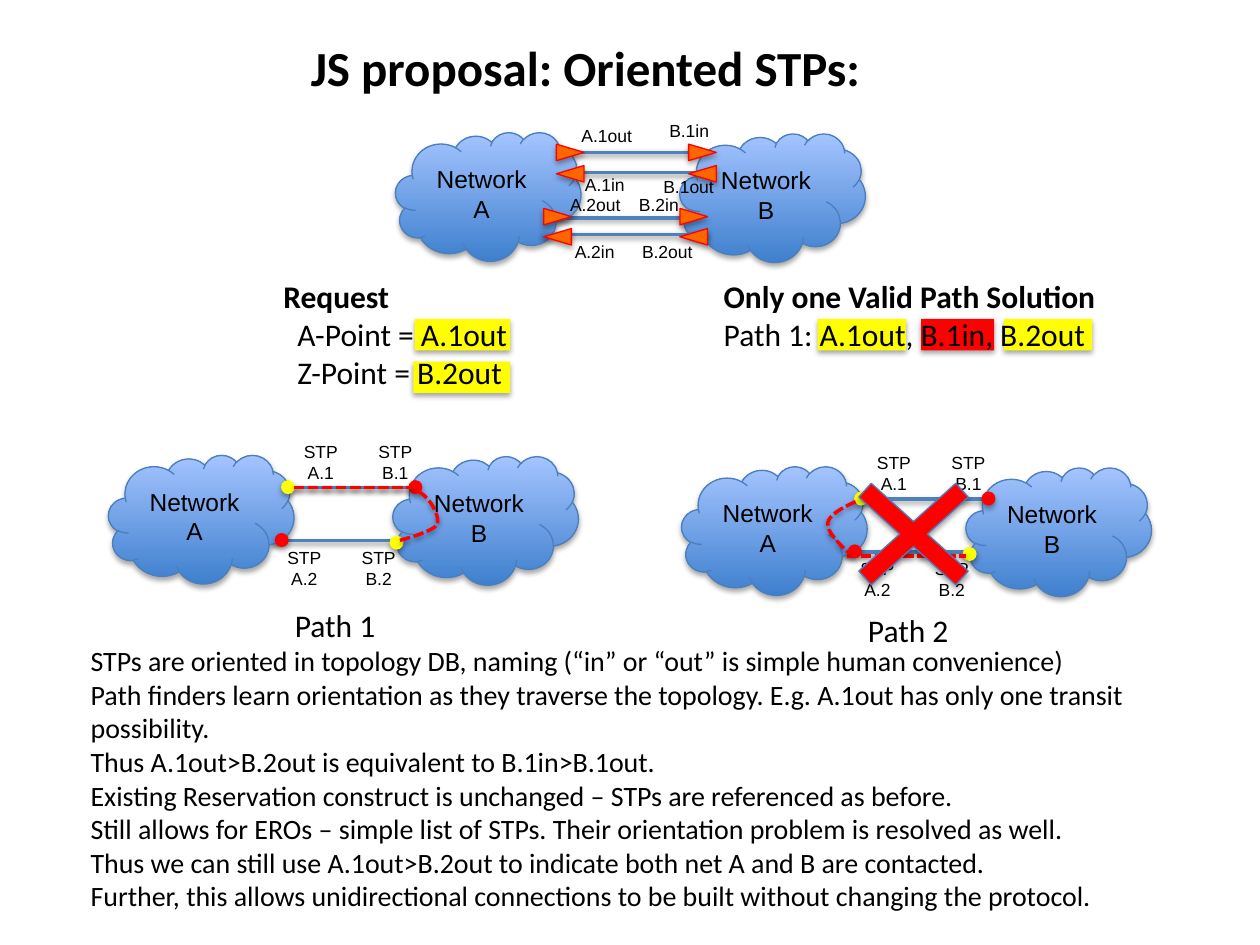
from dataclasses import dataclass

from lxml.etree import SubElement
from pptx import Presentation
from pptx.dml.color import RGBColor as RGB
from pptx.enum.dml import MSO_LINE
from pptx.enum.shapes import MSO_CONNECTOR, MSO_SHAPE as SHAPE
from pptx.enum.text import MSO_ANCHOR as ANCHOR, MSO_AUTO_SIZE as FIT, PP_ALIGN as ALIGN
from pptx.oxml.ns import qn
from pptx.util import Pt


@dataclass(frozen=True)
class Theme:
    """Colours, fonts and type sizes of the slide."""
    text: str = "000000"
    link: str = "4F81BD"
    edge: str = "4B7EBC"
    cloud_low: str = "3F80CE"
    cloud_high: str = "A4C4FF"
    yellow: str = "FFFF00"
    red: str = "FF0000"
    orange: str = "FF6600"
    head_font: str = "Calibri"
    label_font: str = "Arial"
    title: float = 28
    lead: float = 18
    body: float = 16
    cloud: float = 14
    label: float = 10


@dataclass(frozen=True)
class Box:
    """A rectangle in points."""
    x: float
    y: float
    w: float
    h: float

    def emu(self) -> tuple:
        """Return the rectangle as lengths for python-pptx."""
        return tuple(Pt(v) for v in (self.x, self.y, self.w, self.h))


@dataclass(frozen=True)
class PathDiagram:
    """Two linked networks and the dashed route taken between them."""
    x: float
    y: float
    caption: str
    caption_y: float
    route: tuple
    turn: tuple


T = Theme()
CLOUD_W, CLOUD_H, CLOUD_STEP = 106, 73.5, 162.5
PATHS = (
    PathDiagram(62, 260, "Path 1", 82.8, (105.8, 175, 18.7),
                ((177.1, 20.9), (184.3, 24.5), (189.4, 35.3), (187.9, 39.6),
                 (185.8, 43.9), (165.6, 49), (165.6, 49))),
    PathDiagram(389.5, 266.5, "Path 2", 79.2, (94.3, 162.7, 51.1),
                ((99.4, 20.2), (91.4, 23.8), (83.5, 28.1), (83.5, 33.1),
                 (82.8, 38.2), (95.8, 49.7), (95.8, 49.7))),
)
STP_DOTS = ((98.6, 14.4, T.yellow), (95, 44.6, T.red),
            (160.6, 46.1, T.yellow), (171.4, 14.4, T.red))
STP_LABELS = (("A.1", 104.4, -11.5), ("A.2", 95, 49), ("B.1", 147, -11.5), ("B.2", 137.5, 49))
BACK_LINKS = ((326.9, 409.7, 98.6), (321.8, 404.6, 87.1), (318.2, 401, 124.6))
FRONT_LINK = (309.6, 404.6, 133.9)
ARROW_PAIRS = ((321.1, 79.2, 91.4), (396.7, 79.2, 91.4),
               (391.7, 115.9, 127.4), (313.9, 115.9, 127.4))
PORT_LABELS = (("A.1out", 324.7, 67.7), ("B.1in", 375.1, 64.8), ("A.1in", 326.9, 95.8),
               ("B.1out", 371.5, 97.2), ("A.2out", 318.2, 107.3), ("B.2in", 357.8, 107.3),
               ("A.2in", 321.1, 133.9), ("B.2out", 359.3, 133.9))
HIGHLIGHTS = ((467.3, 182.2, 50.4, T.yellow), (573.8, 182.2, 50.4, T.yellow),
              (526.3, 182.2, 41.8, T.red), (236.2, 206.6, 55.4, T.yellow),
              (236.9, 182.2, 54.7, T.yellow))
NOTES = (
    "STPs are oriented in topology DB, naming (“in” or “out” is simple human convenience)",
    "Path finders learn orientation as they traverse the topology. E.g. A.1out has only one transit possibility.",
    "Thus A.1out>B.2out is equivalent to B.1in>B.1out.",
    "Existing Reservation construct is unchanged – STPs are referenced as before.",
    "Still allows for EROs – simple list of STPs. Their orientation problem is resolved as well.",
    "Thus we can still use A.1out>B.2out to indicate both net A and B are contacted.",
    "Further, this allows unidirectional connections to be built without changing the protocol.",
)


def assign(obj, values: dict) -> None:
    """Set each named attribute on an object."""
    for name, value in values.items():
        setattr(obj, name, value)


def write(tf, lines, font: str, size: float, align=ALIGN.LEFT, bold_lines: int = 0) -> None:
    """Fill a text frame with one formatted paragraph per line."""
    for i, line in enumerate(lines):
        p = tf.paragraphs[0] if i == 0 else tf.add_paragraph()
        assign(p, {"alignment": align, "space_before": Pt(0)})
        r = p.add_run()
        r.text = line
        assign(r.font, {"name": font, "size": Pt(size), "bold": i < bold_lines})
        r.font.color.rgb = RGB.from_string(T.text)


def add_text(shapes, box: Box, lines, font: str, size: float, **options):
    """Add an unwrapped text box."""
    tf = shapes.add_textbox(*box.emu()).text_frame
    assign(tf, {"word_wrap": False, "auto_size": FIT.SHAPE_TO_FIT_TEXT})
    write(tf, lines, font, size, **options)
    return tf


def add_shadow(s, alpha: int = 35, dist: float = 1.8) -> None:
    """Give a shape a soft shadow that falls straight down."""
    effects = SubElement(s._element.spPr, qn("a:effectLst"))
    shadow = SubElement(effects, qn("a:outerShdw"), blurRad=str(Pt(3.1)), dist=str(Pt(dist)),
                        dir="5400000", rotWithShape="0")
    color = SubElement(shadow, qn("a:srgbClr"), val="000000")
    SubElement(color, qn("a:alpha"), val=str(alpha * 1000))


def add_solid(shapes, kind, box: Box, fill: str, edge: str = "", rotation: float = 0):
    """Add a filled shape with an optional thin outline."""
    s = shapes.add_shape(kind, *box.emu())
    s.rotation = rotation
    s.fill.solid()
    s.fill.fore_color.rgb = RGB.from_string(fill)
    if edge:
        s.line.color.rgb = RGB.from_string(edge)
        s.line.width = Pt(0.75)
    else:
        s.line.fill.background()
    add_shadow(s)
    return s


def style_stroke(s, color: str, dashed: bool) -> None:
    """Format a link or route stroke."""
    s.line.color.rgb = RGB.from_string(color)
    s.line.width = Pt(2)
    if dashed:
        s.line.dash_style = MSO_LINE.SQUARE_DOT
    add_shadow(s, 38, 1.6)


def add_link(shapes, x1: float, x2: float, y: float, color: str = T.link, dashed: bool = False) -> None:
    """Add a horizontal link."""
    s = shapes.add_connector(MSO_CONNECTOR.STRAIGHT, Pt(x1), Pt(y), Pt(x2), Pt(y))
    style_stroke(s, color, dashed)


def add_turn(shapes, points, steps: int = 12) -> None:
    """Add a dashed curve through consecutive cubic segments."""
    curve = []
    for i in range(0, len(points) - 1, 3):
        for t in (n / steps for n in range(1, steps + 1)):
            weights = ((1 - t) ** 3, 3 * t * (1 - t) ** 2, 3 * t * t * (1 - t), t ** 3)
            curve.append(tuple(Pt(sum(w * p[axis] for w, p in zip(weights, points[i:i + 4])))
                               for axis in (0, 1)))
    builder = shapes.build_freeform(Pt(points[0][0]), Pt(points[0][1]))
    builder.add_line_segments(curve, close=False)
    s = builder.convert_to_shape()
    s.fill.background()
    style_stroke(s, T.red, True)


def add_clouds(shapes, x: float, y: float) -> None:
    """Add networks B and A side by side."""
    for name, dx, dy in (("B", CLOUD_STEP, 0.7), ("A", 0, 0)):
        s = shapes.add_shape(SHAPE.CLOUD, *Box(x + dx, y + dy, CLOUD_W, CLOUD_H).emu())
        s.fill.gradient()
        s.fill.gradient_angle = 90
        for stop, color, position in zip(s.fill.gradient_stops, (T.cloud_low, T.cloud_high), (0, 1)):
            stop.color.rgb = RGB.from_string(color)
            stop.position = position
        s.line.color.rgb = RGB.from_string(T.edge)
        s.line.width = Pt(0.75)
        add_shadow(s)
        assign(s.text_frame, {"word_wrap": True, "vertical_anchor": ANCHOR.MIDDLE})
        write(s.text_frame, [f"Network {name}"], T.label_font, T.cloud, ALIGN.CENTER)


def add_path(shapes, d: PathDiagram) -> None:
    """Draw one candidate path."""
    for y in (18.7, 49):
        add_link(shapes, d.x + 93, d.x + 175.8, d.y + y)
    add_clouds(shapes, d.x, d.y)
    for x, y, color in STP_DOTS:
        add_solid(shapes, SHAPE.OVAL, Box(d.x + x, d.y + y, 8, 8), color)
    for name, x, y in STP_LABELS:
        add_text(shapes, Box(d.x + x, d.y + y, 33.8, 31.7), ["STP", name],
                 T.label_font, T.label, align=ALIGN.CENTER)
    x1, x2, y = d.route
    add_link(shapes, d.x + x1, d.x + x2, d.y + y, T.red, True)
    add_turn(shapes, [(d.x + x, d.y + y) for x, y in d.turn])
    add_text(shapes, Box(d.x + 99.4, d.y + d.caption_y, 62, 29), [d.caption], T.head_font, T.lead)


def add_ports(shapes) -> None:
    """Draw the networks with oriented STPs."""
    for link in BACK_LINKS:
        add_link(shapes, *link)
    add_clouds(shapes, 226, 75.6)
    add_link(shapes, *FRONT_LINK)
    for x, y_right, y_left in ARROW_PAIRS:
        for y, turn in ((y_right, 90), (y_left, 270)):
            add_solid(shapes, SHAPE.ISOSCELES_TRIANGLE, Box(x, y, 9.4, 15.8), T.orange, T.red, turn)
    for name, x, y in PORT_LABELS:
        width = 43.9 if name.endswith("out") else 37.4
        add_text(shapes, Box(x, y, width, 19.4), [name], T.label_font, T.label, align=ALIGN.CENTER)


def add_request(shapes) -> None:
    """Write the request and its solution over the highlights."""
    for x, y, w, color in HIGHLIGHTS:
        add_solid(shapes, SHAPE.RECTANGLE, Box(x, y, w, 18), color)
    tf = add_text(shapes, Box(154.8, 154.8, 146, 72.7),
                  ["Request", "A-Point = A.1out", "Z-Point = B.2out"], T.head_font, T.lead, bold_lines=1)
    for p in tf.paragraphs[1:]:
        p._p.get_or_add_pPr().set("marL", str(Pt(8)))
    add_text(shapes, Box(406.5, 154.8, 236, 51),
             ["Only one Valid Path Solution", "Path 1: A.1out, B.1in, B.2out"],
             T.head_font, T.lead, bold_lines=1)


def fill_placeholders(title, body) -> None:
    """Place and format the title and the notes list."""
    for s, box, wrap in ((title, Box(167.8, 18, 333.4, 41), False),
                         (body, Box(44.6, 364.3, 661.7, 162.7), True)):
        assign(s, dict(zip(("left", "top", "width", "height"), box.emu())))
        assign(s.text_frame, {"word_wrap": wrap, "auto_size": FIT.NONE, "vertical_anchor": ANCHOR.TOP})
    write(title.text_frame, ["JS proposal: Oriented STPs:"], T.head_font, T.title, ALIGN.CENTER, 1)
    write(body.text_frame, NOTES, T.head_font, T.body)
    for p in body.text_frame.paragraphs:
        pPr = p._p.get_or_add_pPr()
        pPr.set("marL", "0")
        pPr.set("indent", "0")
        SubElement(pPr, qn("a:buNone"))


def main() -> None:
    """Build the slide and save it."""
    prs = Presentation()
    assign(prs, {"slide_width": Pt(720), "slide_height": Pt(540)})
    slide = prs.slides.add_slide(prs.slide_layouts[1])
    shapes = slide.shapes
    fill_placeholders(shapes.title, slide.placeholders[1])
    add_ports(shapes)
    for diagram in PATHS:
        add_path(shapes, diagram)
    add_request(shapes)
    cross = add_solid(shapes, SHAPE.MATH_MULTIPLY, Box(468.7, 257, 106.6, 96.5), T.red, T.edge)
    cross.adjustments[0] = 0.11
    prs.save("out.pptx")


if __name__ == "__main__":
    main()
